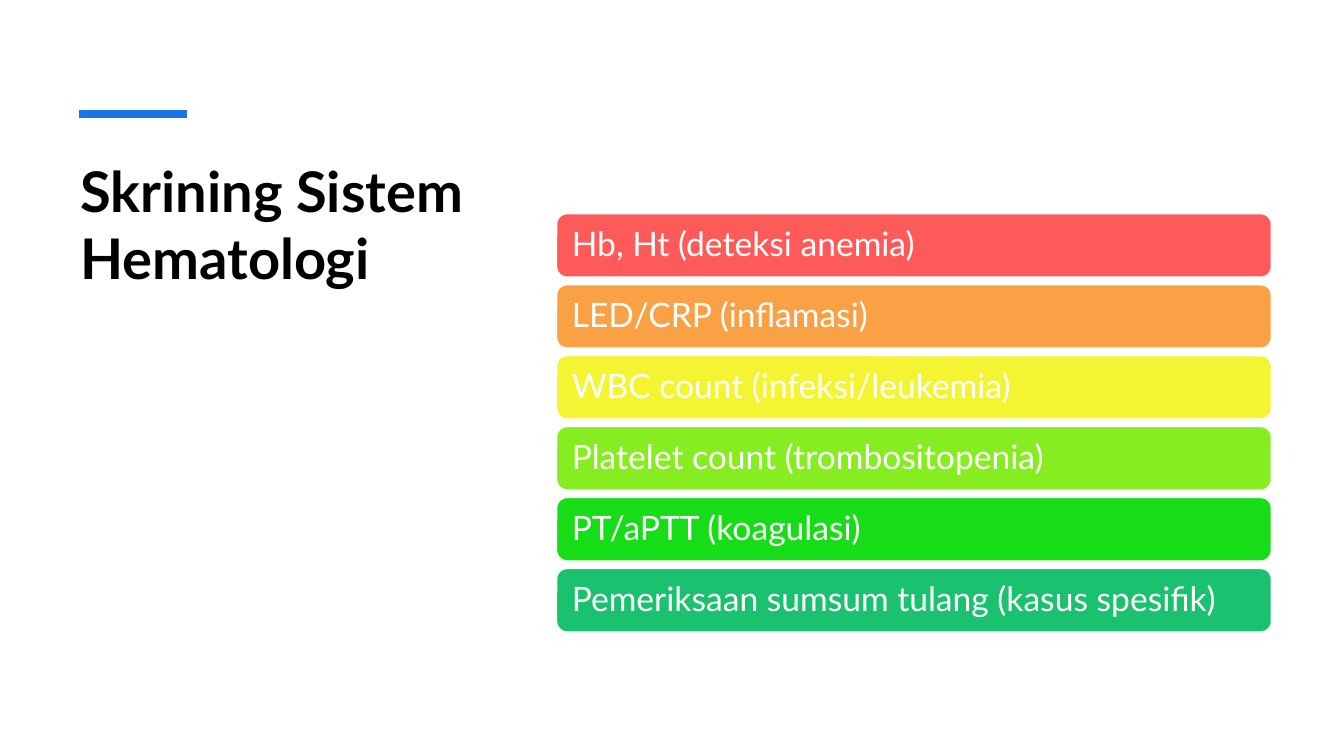
"""Build the slide on screening of the blood system."""
from lxml import etree
from pptx import Presentation
from pptx.dml.color import RGBColor
from pptx.enum.shapes import MSO_CONNECTOR, MSO_SHAPE
from pptx.enum.text import MSO_ANCHOR, PP_ALIGN
from pptx.oxml.ns import qn
from pptx.util import Pt

PX = 9144
LINE = MSO_CONNECTOR.STRAIGHT
ROUND = MSO_SHAPE.ROUNDED_RECTANGLE
TOP, MID = MSO_ANCHOR.TOP, MSO_ANCHOR.MIDDLE
LEFT = PP_ALIGN.LEFT
FONT = "Lato"
HEX = {
    "black": "000000", "white": "FFFFFF", "blue": "1973EB",
    "red": "FE5A5A", "orange": "FAA045", "yellow": "F4F432",
    "lime": "86ED20", "green": "17DD18", "teal": "1AC16E",
}
TESTS = [
    ("Hb, Ht (deteksi anemia)", "red"),
    ("LED/CRP (inflamasi)", "orange"),
    ("WBC count (infeksi/leukemia)", "yellow"),
    ("Platelet count (trombositopenia)", "lime"),
    ("PT/aPTT (koagulasi)", "green"),
    ("Pemeriksaan sumsum tulang (kasus spesifik)", "teal"),
]


def paint(name):
    return RGBColor.from_string(HEX[name])


def write(shape, text, size, color, bold=False, anchor=TOP, side=10, pad=5, lead=1.0):
    frame = shape.text_frame
    frame.word_wrap = True
    frame.vertical_anchor = anchor
    frame.margin_left = frame.margin_right = side * PX
    frame.margin_top = frame.margin_bottom = pad * PX
    para = frame.paragraphs[0]
    para.alignment = LEFT
    para.line_spacing = lead
    run = para.add_run()
    run.text = text
    run.font.name = FONT
    run.font.size = Pt(size)
    run.font.bold = bold
    run.font.color.rgb = paint(color)


deck = Presentation()
deck.slide_width, deck.slide_height = 1333 * PX, 750 * PX
slide = deck.slides.add_slide(deck.slide_layouts[6])
shapes = slide.shapes

title = shapes.add_textbox(70 * PX, 150 * PX, 402 * PX, 429 * PX)
write(title, "Skrining Sistem Hematologi", size=40, color="black", bold=True)

accent = shapes.add_connector(LINE, 78 * PX, 113 * PX, 185 * PX, 113 * PX)
accent.line.color.rgb = paint("blue")
accent.line.width = Pt(6)
props = accent._element.find(qn("p:spPr"))
etree.SubElement(props, qn("a:effectLst"))

for row, (text, color) in enumerate(TESTS):
    top = 212 * PX + round(row * 70.4 * PX)
    bar = shapes.add_shape(ROUND, 552 * PX, top, 709 * PX, 63 * PX)
    bar.shadow.inherit = False
    bar.fill.solid()
    bar.fill.fore_color.rgb = paint(color)
    bar.line.color.rgb = paint("white")
    bar.line.width = Pt(1)
    write(bar, text, size=24, color="white", anchor=MID, side=12, pad=10, lead=0.9)

deck.save("out.pptx")
